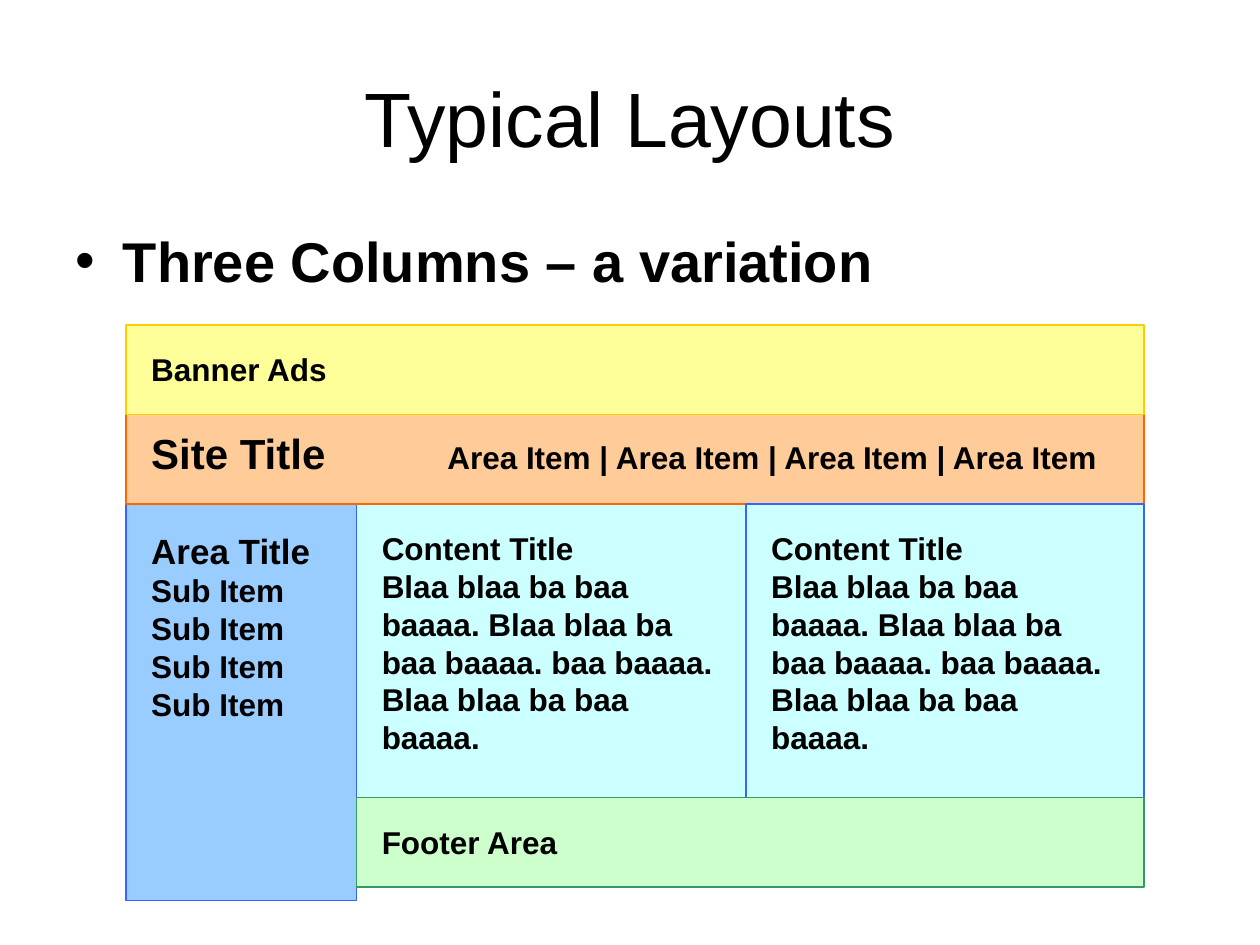
from pptx import Presentation
from pptx.dml.color import RGBColor
from pptx.enum.shapes import MSO_SHAPE as SHAPE
from pptx.enum.text import MSO_ANCHOR as ANCHOR, PP_ALIGN as ALIGN
from pptx.oxml.ns import qn
from pptx.util import Inches, Pt
from lxml.etree import SubElement

TITLE = "Typical Layouts"
BULLET = "Three Columns – a variation"
FONT = "Arial"
INSET = 0.2
MENU_TAB = 2.35
COLS = [1, 2.83, 5.92, 9.08]
ROWS = {"banner": 2.58, "title": 3.19, "main": 4, "footer": 6.33}
CONTENT = [
    [("Content Title", 18)],
    [("Blaa blaa ba baa baaaa. Blaa blaa ba baa baaaa. baa baaaa. "
      "Blaa blaa ba baa baaaa.", 18)],
]
SIDEBAR = [[("Area Title", 20)]] + [[("Sub Item", 18)]] * 4
SITE = [[("Site Title", 24),
         ("\t" + " | ".join(["Area Item"] * 4), 18)]]

# first column, last column, row, height, fill, line, paragraphs
AREAS = [
    (1, 2, "main", 2.81, "CCFFFF", "3366FF", CONTENT),
    (0, 1, "main", 3.15, "99CCFF", "3366FF", SIDEBAR),
    (0, 3, "title", 0.81, "FFCC99", "FF6600", SITE),
    (0, 3, "banner", 0.71, "FFFF99", "FFCC00", [[("Banner Ads", 18)]]),
    (2, 3, "main", 2.81, "CCFFFF", "3366FF", CONTENT),
    (1, 3, "footer", 0.71, "CCFFCC", "339966", [[("Footer Area", 18)]]),
]


def rgb(value):
    """Return the colour for a hex string."""
    return RGBColor.from_string(value)


def style(r, size, bold=True):
    """Format one run in the slide's font."""
    r.font.name, r.font.size, r.font.bold = FONT, Pt(size), bold
    r.font.color.rgb = rgb("000000")


def fill_placeholder(sp, text, top, height, size, bold):
    """Place a placeholder and set its single line of text."""
    sp.left, sp.top, sp.width, sp.height = map(Inches, (0.5, top, 9, height))
    sp.text_frame.text = text
    style(sp.text_frame.paragraphs[0].runs[0], size, bold)


def add_tab(p, pos):
    """Give a paragraph one left tab stop."""
    tabs = SubElement(p._p.get_or_add_pPr(), qn("a:tabLst"))
    SubElement(tabs, qn("a:tab"), pos=str(Inches(pos)), algn="l")


def add_area(s, first, last, row, height, fill, line, paragraphs):
    """Draw one page area with its text on the layout grid."""
    left, width = COLS[first], COLS[last] - COLS[first]
    sp = s.shapes.add_shape(SHAPE.RECTANGLE, *map(Inches, (left, ROWS[row], width, height)))
    sp.shadow.inherit = False
    sp.fill.solid()
    sp.fill.fore_color.rgb = rgb(fill)
    sp.line.color.rgb = rgb(line)
    sp.line.width = Pt(0.75)
    tf = sp.text_frame
    tf.word_wrap = True
    tf.vertical_anchor = ANCHOR.TOP
    tf.margin_left = tf.margin_right = tf.margin_top = tf.margin_bottom = Inches(INSET)
    for i, runs in enumerate(paragraphs):
        p = tf.add_paragraph() if i else tf.paragraphs[0]
        p.alignment = ALIGN.LEFT
        if len(runs) > 1:
            add_tab(p, MENU_TAB)
        for text, size in runs:
            r = p.add_run()
            r.text = text
            style(r, size)


def main():
    """Build and save the slide."""
    prs = Presentation()
    prs.slide_width, prs.slide_height = Inches(10), Inches(7.5)
    s = prs.slides.add_slide(prs.slide_layouts[1])
    fill_placeholder(s.shapes.title, TITLE, 0.3, 1.25, 44, False)
    fill_placeholder(s.placeholders[1], BULLET, 1.75, 4.95, 32, True)
    for area in AREAS:
        add_area(s, *area)
    prs.save("out.pptx")


if __name__ == "__main__":
    main()
